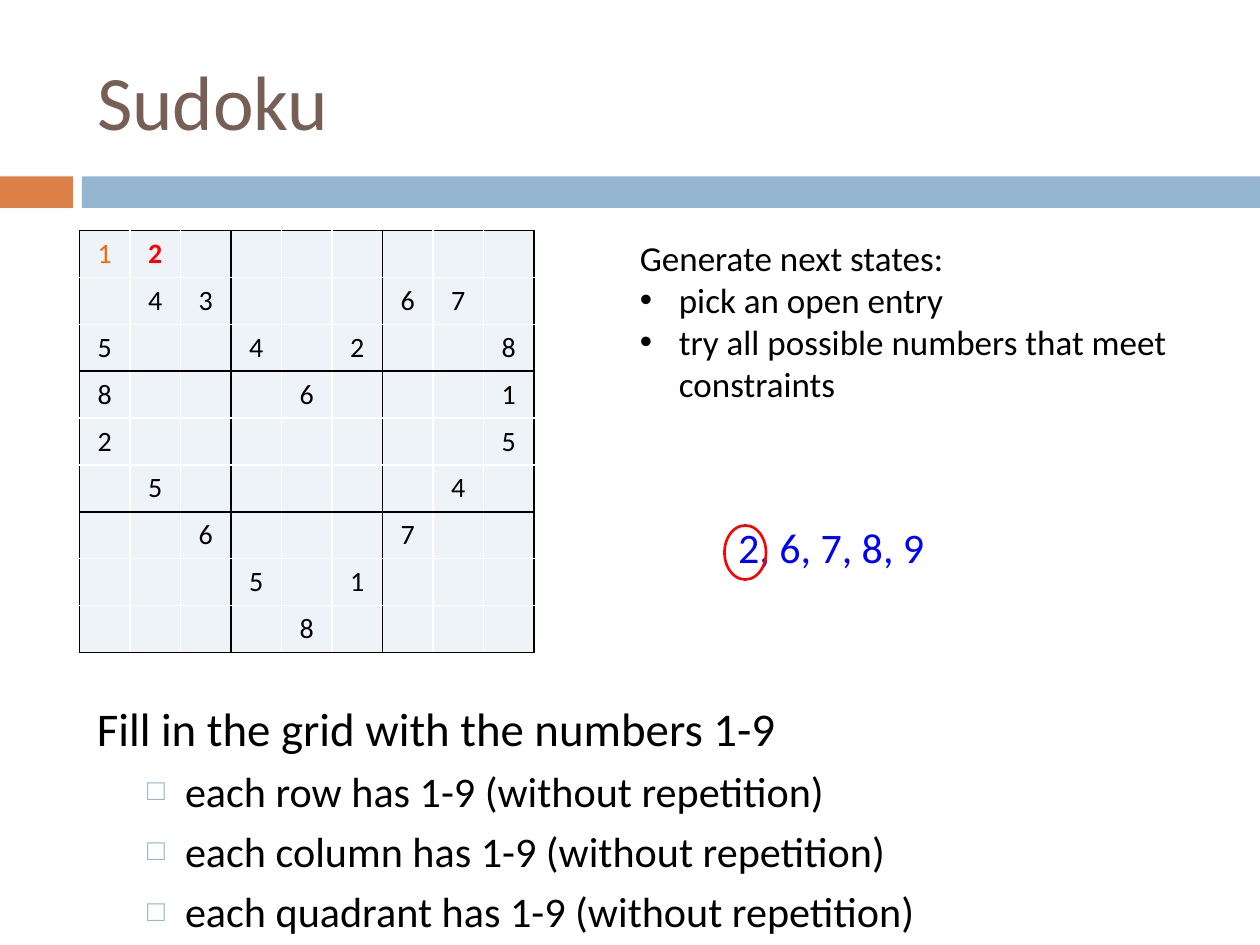
from dataclasses import dataclass

from pptx import Presentation
from pptx.dml.color import RGBColor
from pptx.enum.shapes import MSO_SHAPE as Shape
from pptx.enum.text import MSO_ANCHOR as Anchor, PP_ALIGN as Align
from pptx.oxml.ns import qn
from pptx.util import Inches, Pt
from lxml.etree import SubElement

FONT = "Calibri"
COLORS = {
    "orange": "DD8047", "blue": "94B6D2", "brown": "775F55",
    "black": "000000", "white": "FFFFFF", "cell": "EEF3F7",
    "given": "FF6600", "red": "FF0000", "choices": "0000FF",
}
SIZE = 9
BLOCK = 3
CELL_POINTS = 16
PUZZLE = [
    "12.......",
    ".43...67.",
    "5..4.2..8",
    "8...6...1",
    "2.......5",
    ".5.....4.",
    "..6...7..",
    "...5.1...",
    "....8....",
]


@dataclass
class Box:
    left: float
    top: float
    width: float
    height: float

    def lengths(self) -> tuple:
        return tuple(Inches(n) for n in (self.left, self.top, self.width, self.height))


@dataclass
class Bullet:
    symbol: str
    left: float
    hang: float
    color: str = "black"
    percent: int = 100


@dataclass
class Line:
    text: str
    points: float
    color: str = "black"
    before: float = 0
    level: int = 0
    bullet: Bullet | None = None


SQUARE = Bullet("□", 0.7, 0.3, "blue", 70)
DOT = Bullet("•", 0.31, 0.31)


def rgb(name: str) -> RGBColor:
    return RGBColor.from_string(COLORS[name])


def style(para, points: float, color: str, bold: bool = False) -> None:
    for span in para.runs:
        span.font.name = FONT
        span.font.size = Pt(points)
        span.font.bold = bold
        span.font.color.rgb = rgb(color)


def add_bullet(para, bullet: Bullet) -> None:
    props = para._p.get_or_add_pPr()
    props.set("marL", str(Inches(bullet.left)))
    props.set("indent", str(-Inches(bullet.hang)))
    color = SubElement(props, qn("a:buClr"))
    SubElement(color, qn("a:srgbClr"), val=COLORS[bullet.color])
    SubElement(props, qn("a:buSzPct"), val=str(bullet.percent * 1000))
    SubElement(props, qn("a:buFont"), typeface="Arial")
    SubElement(props, qn("a:buChar"), char=bullet.symbol)


def add_text(page, box: Box, lines: list[Line], wrap: bool = True) -> None:
    frame = page.shapes.add_textbox(*box.lengths()).text_frame
    frame.word_wrap = wrap
    frame.text = "\n".join(line.text for line in lines)
    for para, line in zip(frame.paragraphs, lines):
        para.level = line.level
        para.space_before = Pt(line.before)
        style(para, line.points, line.color)
        if line.bullet:
            add_bullet(para, line.bullet)


def add_plain_shape(page, kind, box: Box, fill: str = "", outline: str = "") -> None:
    shape = page.shapes.add_shape(kind, *box.lengths())
    shape.shadow.inherit = False
    if fill:
        shape.fill.solid()
        shape.fill.fore_color.rgb = rgb(fill)
    else:
        shape.fill.background()
    if outline:
        shape.line.color.rgb = rgb(outline)
        shape.line.width = Pt(1.5)
    else:
        shape.line.fill.background()


def set_borders(cell, row: int, column: int) -> None:
    """Black lines around each block, white lines inside it."""
    last = BLOCK - 1
    block_edges = {
        "a:lnL": column % BLOCK == 0,
        "a:lnR": column % BLOCK == last,
        "a:lnT": row % BLOCK == 0,
        "a:lnB": row % BLOCK == last,
    }
    props = cell._tc.get_or_add_tcPr()
    for tag, at_edge in block_edges.items():
        border = SubElement(props, qn(tag), w=str(Pt(1)))
        fill = SubElement(border, qn("a:solidFill"))
        SubElement(fill, qn("a:srgbClr"), val=COLORS["black" if at_edge else "white"])


def add_puzzle(page, box: Box) -> None:
    table = page.shapes.add_table(SIZE, SIZE, *box.lengths()).table
    table.first_row = False
    table.horz_banding = False
    highlights = {(0, 0): ("given", False), (0, 1): ("red", True)}
    for column in table.columns:
        column.width = Inches(box.width / SIZE)
    for row, digits in enumerate(PUZZLE):
        table.rows[row].height = Inches(box.height / SIZE)
        for column, digit in enumerate(digits):
            cell = table.cell(row, column)
            set_borders(cell, row, column)
            cell.fill.solid()
            cell.fill.fore_color.rgb = rgb("cell")
            para = cell.text_frame.paragraphs[0]
            para.alignment = Align.CENTER
            if digit == ".":
                SubElement(para._p, qn("a:endParaRPr"), sz=str(CELL_POINTS * 100))
            else:
                para.text = digit
                color, bold = highlights.get((row, column), ("black", False))
                style(para, CELL_POINTS, color, bold)


def add_title(page, text: str, box: Box) -> None:
    title = page.shapes.title
    title.left, title.top, title.width, title.height = box.lengths()
    title.text_frame.text = text
    title.text_frame.vertical_anchor = Anchor.MIDDLE
    para = title.text_frame.paragraphs[0]
    para.alignment = Align.LEFT
    style(para, 44, "brown")


def main() -> None:
    deck = Presentation()
    deck.slide_width, deck.slide_height = Inches(10), Inches(7.5)
    page = deck.slides.add_slide(deck.slide_layouts[5])

    add_plain_shape(page, Shape.RECTANGLE, Box(0, 1.4, 0.58, 0.25), fill="orange")
    add_plain_shape(page, Shape.RECTANGLE, Box(0.65, 1.4, 9.35, 0.25), fill="blue")
    add_title(page, "Sudoku", Box(0.67, 0.25, 8.92, 1.08))
    add_puzzle(page, Box(0.63, 1.83, 3.61, 3.3))

    rules = [
        Line(f"each {unit} has 1-9 (without repetition)", 24.1, before=5.5, level=1, bullet=SQUARE)
        for unit in ("row", "column", "quadrant")
    ]
    goal = Line("Fill in the grid with the numbers 1-9", 26.8, before=7)
    add_text(page, Box(0.67, 5.5, 8.92, 1.75), [goal, *rules])
    add_text(page, Box(4.98, 1.83, 4.86, 2.12), [
        Line("Generate next states:", 20),
        Line("pick an open entry", 20, bullet=DOT),
        Line("try all possible numbers that meet constraints", 20, bullet=DOT),
    ])
    choices = Line("2, 6, 7, 8, 9", 24, "choices")
    add_text(page, Box(5.76, 4.09, 1.8, 0.5), [choices], wrap=False)
    add_plain_shape(page, Shape.OVAL, Box(5.75, 4.17, 0.33, 0.43), outline="red")
    deck.save("out.pptx")


if __name__ == "__main__":
    main()
